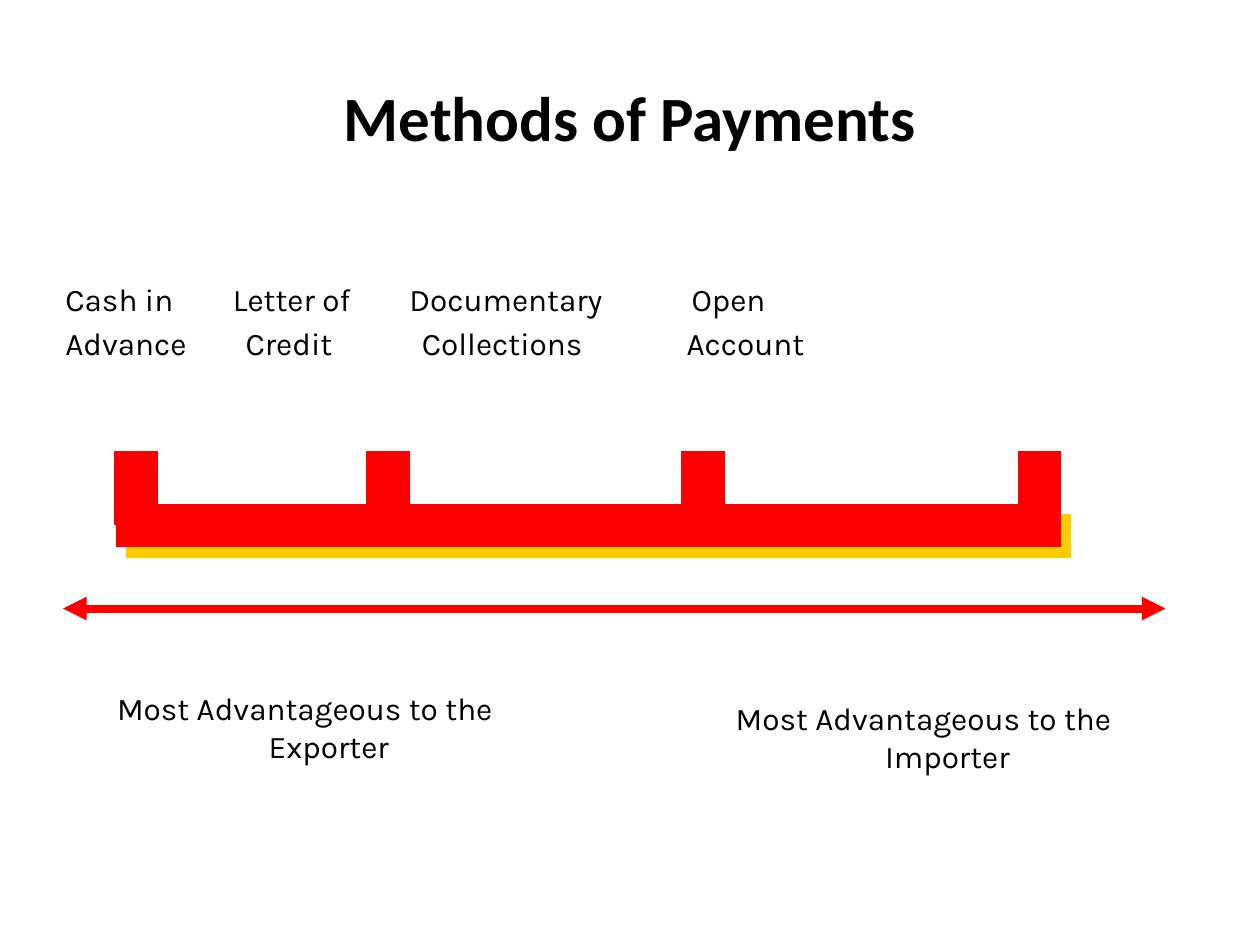
from dataclasses import dataclass

from lxml.etree import SubElement
from pptx import Presentation
from pptx.dml.color import RGBColor
from pptx.enum.shapes import MSO_CONNECTOR
from pptx.enum.text import MSO_ANCHOR, PP_ALIGN
from pptx.oxml.ns import qn
from pptx.util import Inches, Pt


@dataclass(frozen=True)
class Theme:
    ink: RGBColor = RGBColor(0, 0, 0)
    red: RGBColor = RGBColor(255, 0, 0)
    gold: str = "FFCC00"
    head: str = "Calibri"
    body: str = "Karla"
    title: int = 36
    text: int = 18
    gap: float = 3.6
    bar: int = 25
    arrow: float = 4.5


LOOK = Theme()
WIDE, HIGH = 10, 7.5
LEFT = 0.42
BAR_Y, TICK_Y, ARROW_Y = 4.17, 3.58, 4.83
TICKS = (1.08, 3.08, 5.58, 8.25)
ROWS = (
    (("Cash in", "Letter of", "Documentary", "Open"), (1.33, 2.73, 4.97)),
    (("Advance", "Credit", "Collections", "Account"), (1.43, 2.83, 4.93)),
)
SIDES = (("Exporter", LEFT, 5.42), ("Importer", 5.33, 5.5))


def add_run(para, text, font=LOOK.body, size=LOOK.text, bold=False):
    run = para.add_run()
    run.text = text
    run.font.name = font
    run.font.size = Pt(size)
    run.font.bold = bold
    run.font.color.rgb = LOOK.ink


def add_title(slide, text):
    shape = slide.shapes.title
    shape.left, shape.top = Inches(0.05 * WIDE), Inches(0.04 * HIGH)
    shape.width, shape.height = Inches(0.9 * WIDE), Inches(HIGH / 6)
    frame = shape.text_frame
    frame.vertical_anchor = MSO_ANCHOR.MIDDLE
    para = frame.paragraphs[0]
    para.alignment = PP_ALIGN.CENTER
    add_run(para, text, LOOK.head, LOOK.title, True)


def add_box(slide, left, top, width):
    box = slide.shapes.add_textbox(
        Inches(left), Inches(top), Inches(width), Inches(HIGH / 6))
    box.text_frame.word_wrap = True
    return box.text_frame


def set_tabs(para, stops):
    tabs = SubElement(para._p.get_or_add_pPr(), qn("a:tabLst"))
    for stop in stops:
        SubElement(tabs, qn("a:tab"), pos=str(Inches(stop)), algn="l")


def add_labels(slide):
    frame = add_box(slide, LEFT, 2.17, WIDE - LEFT)
    for row, (words, stops) in enumerate(ROWS):
        para = frame.add_paragraph() if row else frame.paragraphs[0]
        para.space_before = Pt(LOOK.gap)
        set_tabs(para, stops)
        add_run(para, "\t".join(words))


def add_side(slide, name, left, top):
    para = add_box(slide, left, top, 0.4 * WIDE).paragraphs[0]
    para.alignment = PP_ALIGN.CENTER
    para.space_before = Pt(LOOK.gap)
    props = para._p.get_or_add_pPr()
    props.set("marL", str(Inches(0.38)))
    props.set("indent", str(-Inches(0.38)))
    add_run(para, f"Most Advantageous to the {name}")


def add_line(slide, start, end, width, arrow=False, shade=False):
    line = slide.shapes.add_connector(
        MSO_CONNECTOR.STRAIGHT, *(Inches(n) for n in (*start, *end)))
    line.line.color.rgb = LOOK.red
    line.line.width = Pt(width)
    if arrow:
        SubElement(line.line._get_or_add_ln(), qn("a:tailEnd"), type="triangle")
    effect = SubElement(line._element.spPr, qn("a:effectLst"))
    if shade:
        cast = SubElement(effect, qn("a:outerShdw"), dist=str(Pt(8.5)),
                          dir=str(45 * 60000), algn="ctr", rotWithShape="0")
        SubElement(cast, qn("a:srgbClr"), val=LOOK.gold)


def add_scale(slide):
    for start, end in ((5, 0.5), (4.67, 9.25)):
        add_line(slide, (start, ARROW_Y), (end, ARROW_Y), LOOK.arrow, arrow=True)
    add_line(slide, (0.92, BAR_Y), (8.42, BAR_Y), LOOK.bar, shade=True)
    for x in TICKS:
        add_line(slide, (x, TICK_Y), (x, BAR_Y), LOOK.bar)


def main():
    deck = Presentation()
    deck.slide_width, deck.slide_height = Inches(WIDE), Inches(HIGH)
    slide = deck.slides.add_slide(deck.slide_layouts[5])
    add_title(slide, "Methods of Payments")
    add_labels(slide)
    add_scale(slide)
    for side in SIDES:
        add_side(slide, *side)
    deck.save("out.pptx")


if __name__ == "__main__":
    main()
